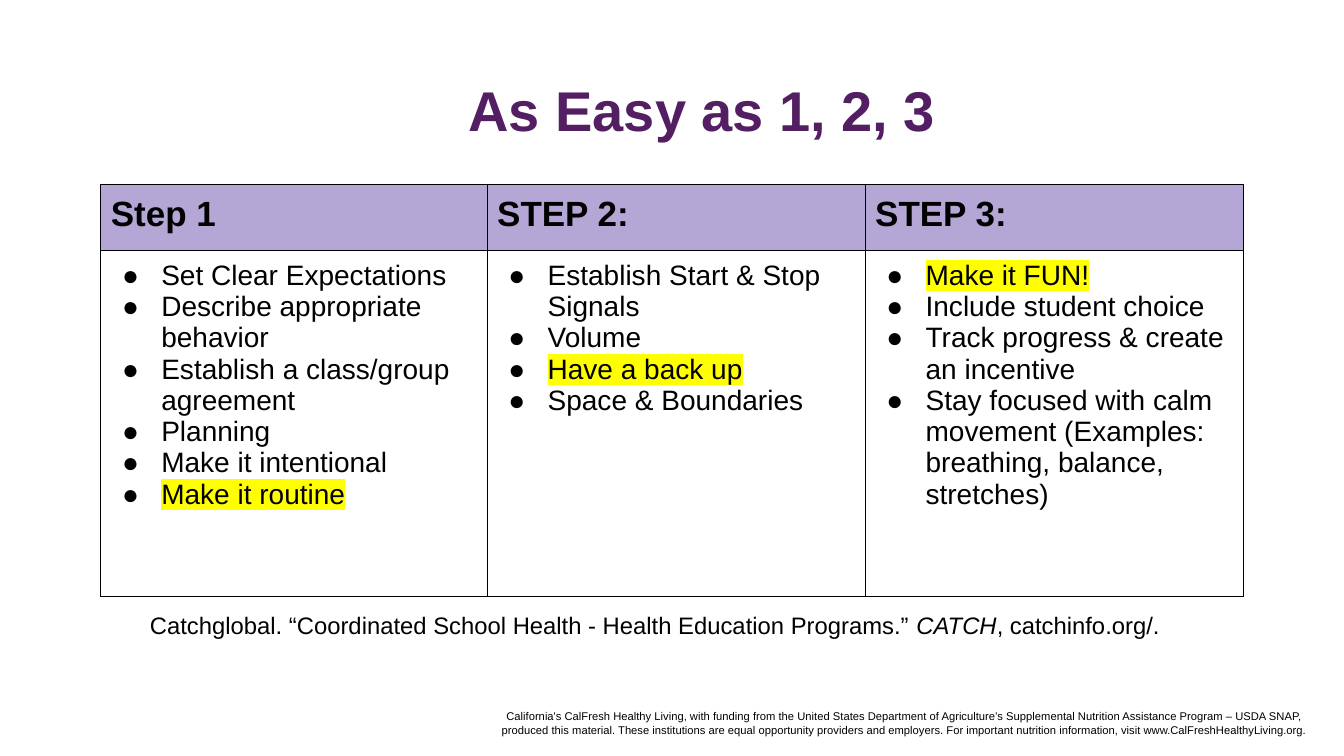
from lxml.etree import SubElement
from pptx import Presentation
from pptx.dml.color import RGBColor
from pptx.enum.text import MSO_ANCHOR as Anchor, PP_ALIGN as Align
from pptx.oxml import parse_xml
from pptx.oxml.ns import nsdecls, qn
from pptx.util import Pt

FONT = "Arial"
BLACK, PURPLE, LILAC, YELLOW = "000000", "531F62", "B4A7D6", "FFFF00"
INSET = 7.2
COLUMN_WIDTHS = (276, 270, 270)
ROW_HEIGHTS = (46.8, 247.7)
HIGHLIGHTED = {"Make it routine", "Have a back up", "Make it FUN!"}
STEPS = {
    "Step 1": [
        "Set Clear Expectations",
        "Describe appropriate behavior",
        "Establish a class/group agreement",
        "Planning",
        "Make it intentional",
        "Make it routine",
    ],
    "STEP 2:": [
        "Establish Start & Stop Signals",
        "Volume",
        "Have a back up",
        "Space & Boundaries",
    ],
    "STEP 3:": [
        "Make it FUN!",
        "Include student choice",
        "Track progress & create an incentive",
        "Stay focused with calm movement (Examples: breathing, balance, stretches)",
    ],
}
CITATION = [
    ("Catchglobal. “Coordinated School Health - Health Education Programs.” ", False),
    ("CATCH", True),
    (", catchinfo.org/.", False),
]
FUNDING = (
    "California's CalFresh Healthy Living, with funding from the United States "
    "Department of Agriculture’s Supplemental Nutrition Assistance Program – USDA SNAP, "
    "produced this material. These institutions are equal opportunity providers and "
    "employers. For important nutrition information, visit www.CalFreshHealthyLiving.org."
)


def color(value):
    """Return the colour for a hex string."""
    return RGBColor.from_string(value)


def add_run(paragraph, text, size, fill=BLACK, bold=False, italic=False):
    """Append a formatted run to a paragraph."""
    run = paragraph.add_run()
    run.text = text
    font = run.font
    font.name, font.size = FONT, Pt(size)
    font.bold, font.italic = bold, italic
    font.color.rgb = color(fill)
    return run


def highlight(run):
    """Mark a run with the highlighter colour."""
    mark = parse_xml(
        f'<a:highlight {nsdecls("a")}><a:srgbClr val="{YELLOW}"/></a:highlight>'
    )
    run.font._element.find(qn("a:solidFill")).addnext(mark)


def set_bullet(paragraph):
    """Give a paragraph a round bullet with a hanging indent."""
    properties = paragraph._p.get_or_add_pPr()
    properties.set("marL", str(Pt(36)))
    properties.set("indent", str(-Pt(28)))
    bullet_color = SubElement(properties, qn("a:buClr"))
    SubElement(bullet_color, qn("a:srgbClr"), val=BLACK)
    SubElement(properties, qn("a:buFont"), typeface=FONT)
    SubElement(properties, qn("a:buChar"), char="●")


def add_text(slide, left, top, width, height, inset=3.6):
    """Add a wrapping text box and return its frame."""
    box = slide.shapes.add_textbox(Pt(left), Pt(top), Pt(width), Pt(height))
    frame = box.text_frame
    frame.word_wrap = True
    frame.margin_left = frame.margin_right = Pt(INSET)
    frame.margin_top = frame.margin_bottom = Pt(inset)
    return frame


def add_title(slide):
    """Add the slide heading."""
    frame = add_text(slide, 92.9, 46.8, 828, 68.4)
    frame.vertical_anchor = Anchor.MIDDLE
    paragraph = frame.paragraphs[0]
    paragraph.alignment = Align.CENTER
    paragraph.line_spacing = 0.9
    add_run(paragraph, "As Easy as 1, 2, 3 ", 40, PURPLE, bold=True)


def format_cell(cell, fill=None):
    """Set the margins, borders and fill of a table cell."""
    cell.margin_left = cell.margin_right = Pt(INSET)
    cell.margin_top = cell.margin_bottom = Pt(INSET)
    properties = cell._tc.get_or_add_tcPr()
    for side in ("lnL", "lnR", "lnT", "lnB"):
        line = SubElement(properties, qn(f"a:{side}"), w=str(Pt(0.75)))
        line_fill = SubElement(line, qn("a:solidFill"))
        SubElement(line_fill, qn("a:srgbClr"), val=BLACK)
    if fill:
        cell.fill.solid()
        cell.fill.fore_color.rgb = color(fill)
    else:
        cell.fill.background()


def fill_bullets(cell, items):
    """Write the bulleted items of one step."""
    frame = cell.text_frame
    for index, item in enumerate(items):
        paragraph = frame.add_paragraph() if index else frame.paragraphs[0]
        set_bullet(paragraph)
        run = add_run(paragraph, item, 20)
        if item in HIGHLIGHTED:
            highlight(run)


def add_steps_table(slide):
    """Add the table with one column per step."""
    table = slide.shapes.add_table(
        len(ROW_HEIGHTS), len(STEPS), Pt(72), Pt(131.8),
        Pt(sum(COLUMN_WIDTHS)), Pt(sum(ROW_HEIGHTS)),
    ).table
    table.first_row = table.horz_banding = False
    for row, height in zip(table.rows, ROW_HEIGHTS):
        row.height = Pt(height)
    for index, (heading, items) in enumerate(STEPS.items()):
        table.columns[index].width = Pt(COLUMN_WIDTHS[index])
        header, body = table.cell(0, index), table.cell(1, index)
        format_cell(header, LILAC)
        add_run(header.text_frame.paragraphs[0], heading, 25, bold=True)
        format_cell(body)
        fill_bullets(body, items)


def add_citation(slide):
    """Add the reference below the table."""
    frame = add_text(slide, 72, 426.2, 790.6, 117.4, INSET)
    paragraph = frame.paragraphs[0]
    paragraph._p.get_or_add_pPr().set("marL", str(Pt(28)))
    paragraph.line_spacing = 1.15
    for text, italic in CITATION:
        add_run(paragraph, text, 17, italic=italic)


def add_funding_note(slide):
    """Add the funding statement at the bottom."""
    paragraph = add_text(slide, 344.2, 503.3, 604.1, 28.8).paragraphs[0]
    paragraph.alignment = Align.CENTER
    add_run(paragraph, FUNDING, 8)


def main():
    """Build and save the slide."""
    presentation = Presentation()
    presentation.slide_width, presentation.slide_height = Pt(960), Pt(540)
    slide = presentation.slides.add_slide(presentation.slide_layouts[6])
    add_funding_note(slide)
    add_title(slide)
    add_steps_table(slide)
    add_citation(slide)
    presentation.save("out.pptx")


if __name__ == "__main__":
    main()
